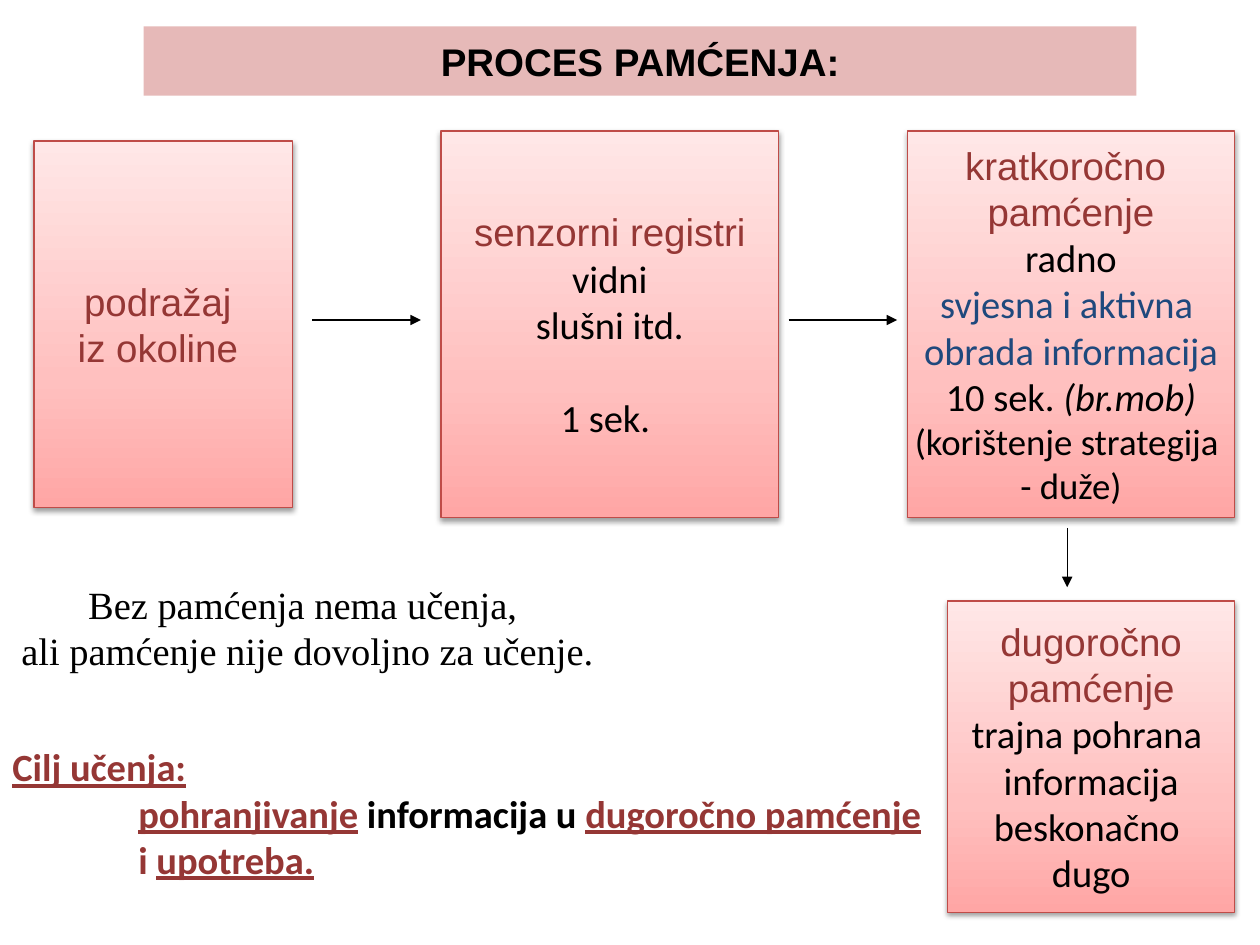
from copy import deepcopy

from lxml import etree
from pptx import Presentation
from pptx.dml.color import RGBColor
from pptx.enum.shapes import MSO_CONNECTOR, MSO_SHAPE
from pptx.enum.text import MSO_ANCHOR, PP_ALIGN
from pptx.oxml import parse_xml
from pptx.oxml.ns import nsdecls, qn
from pptx.util import Inches, Pt

BLACK = RGBColor(0x00, 0x00, 0x00)
DARK_RED = RGBColor(0x95, 0x37, 0x35)
BLUE = RGBColor(0x1F, 0x49, 0x7D)
BORDER_RED = RGBColor(0xBF, 0x4C, 0x48)
BANNER_PINK = RGBColor(0xE6, 0xB9, 0xB8)
BOX_STOPS = [
    (0, RGBColor(0xFF, 0xA6, 0xA5)),
    (0.35, RGBColor(0xFF, 0xC0, 0xBF)),
    (1, RGBColor(0xFF, 0xE7, 0xE7)),
]
SHADOW = (
    f'<a:outerShdw {nsdecls("a")} blurRad="{Pt(3.1)}" dist="{Pt(1.6)}" dir="5400000" '
    'rotWithShape="0"><a:srgbClr val="000000"><a:alpha val="38000"/></a:srgbClr></a:outerShdw>'
)


def write_lines(frame, lines, font, color, wrap=True, align=PP_ALIGN.CENTER):
    """Write one paragraph per line and return the paragraphs."""
    frame.word_wrap = wrap
    frame.vertical_anchor = MSO_ANCHOR.MIDDLE
    paragraphs = []
    for number, line in enumerate(lines):
        paragraph = frame.add_paragraph() if number else frame.paragraphs[0]
        paragraph.alignment = align
        paragraph.font.size = Pt(22)
        paragraph.font.name = font
        paragraph.font.color.rgb = color
        paragraph.add_run().text = line
        paragraphs.append(paragraph)
    return paragraphs


prs = Presentation()
prs.slide_width, prs.slide_height = Inches(10), Inches(7.5)
slide = prs.slides.add_slide(prs.slide_layouts[6])
shapes = slide.shapes

# Memory stages: position, heading lines, detail lines
stages = [
    ((0.27, 1.12, 2.05, 2.91), ["podražaj ", "iz okoline "], []),
    ((3.5, 1.04, 2.68, 3.07), ["senzorni registri"], ["vidni", "slušni itd.", "1 sek. "]),
    ((7.2, 1.04, 2.6, 3.07), ["kratkoročno ", "pamćenje"],
     ["radno", "svjesna i aktivna ", "obrada informacija", "10 sek. ",
      "(korištenje strategija ", "- duže)"]),
    ((7.52, 4.77, 2.28, 2.47), ["dugoročno", "pamćenje"],
     ["trajna pohrana ", "informacija", "beskonačno ", "dugo"]),
]
stage_paragraphs = []
for position, heading, details in stages:
    box = shapes.add_shape(MSO_SHAPE.RECTANGLE, *map(Inches, position))
    box.line.color.rgb = BORDER_RED
    box.line.width = Pt(0.75)
    box.fill.gradient()
    box.fill.gradient_angle = 90
    stop_list = box.fill._fill._gradFill.find(qn("a:gsLst"))
    stop_list.append(deepcopy(stop_list[-1]))
    for stop, (offset, color) in zip(box.fill.gradient_stops, BOX_STOPS):
        stop.position = offset
        stop.color.rgb = color
    box.shadow.inherit = False
    box._element.spPr.find(qn("a:effectLst")).append(parse_xml(SHADOW))

    paragraphs = write_lines(box.text_frame, heading + details, "Calibri", BLACK, wrap=False)
    for paragraph in paragraphs[:len(heading)]:
        paragraph.font.name = "Arial"
        paragraph.font.color.rgb = DARK_RED
    stage_paragraphs.append(paragraphs)

sensory, short_term = stage_paragraphs[1:3]
sensory[-1].space_before = Pt(27)
for paragraph in short_term[3:5]:
    paragraph.font.color.rgb = BLUE
example = short_term[5].add_run()
example.text = "(br.mob)"
example.font.italic = True
for paragraph in short_term[6:]:
    paragraph.font.size = Pt(21)

# Arrows between the stages
for ends in [(2.48, 2.54, 3.34, 2.54), (6.26, 2.54, 7.12, 2.54), (8.47, 4.19, 8.47, 4.66)]:
    arrow = shapes.add_connector(MSO_CONNECTOR.STRAIGHT, *map(Inches, ends))
    arrow.line.color.rgb = BLACK
    arrow.line.width = Pt(0.75)
    etree.SubElement(arrow.line._get_or_add_ln(), qn("a:tailEnd"), type="triangle")
    etree.SubElement(arrow._element.spPr, qn("a:effectLst"))

# Learning goal
goal = shapes.add_textbox(Inches(0), Inches(5.56), Inches(7.44), Inches(1.78))
goal_lines = write_lines(goal.text_frame, ["Cilj učenja:", "pohranjivanje", "i "],
                         "Calibri", DARK_RED, align=PP_ALIGN.LEFT)
for paragraph in goal_lines:
    paragraph.font.bold = True
for paragraph in goal_lines[1:]:
    paragraph._p.get_or_add_pPr().set("marL", str(Inches(1)))
for paragraph in goal_lines[:2]:
    paragraph.runs[0].font.underline = True
middle = goal_lines[1].add_run()
middle.text = " informacija u "
middle.font.color.rgb = BLACK
for paragraph, text in [(goal_lines[1], "dugoročno pamćenje"), (goal_lines[2], "upotreba.")]:
    key_term = paragraph.add_run()
    key_term.text = text
    key_term.font.underline = True

# Heading banner
banner = shapes.add_shape(MSO_SHAPE.RECTANGLE, Inches(1.14), Inches(0.21), Inches(7.88), Inches(0.55))
banner.shadow.inherit = False
banner.fill.solid()
banner.fill.fore_color.rgb = BANNER_PINK
banner.line.fill.background()
write_lines(banner.text_frame, ["PROCES PAMĆENJA:"], "Arial", BLACK)[0].font.bold = True

# Closing thought
thought = shapes.add_textbox(Inches(0), Inches(4.54), Inches(4.88), Inches(0.87))
write_lines(thought.text_frame,
            ["Bez pamćenja nema učenja, ", "ali pamćenje nije dovoljno za učenje."],
            "Times New Roman", BLACK)

prs.save("out.pptx")
